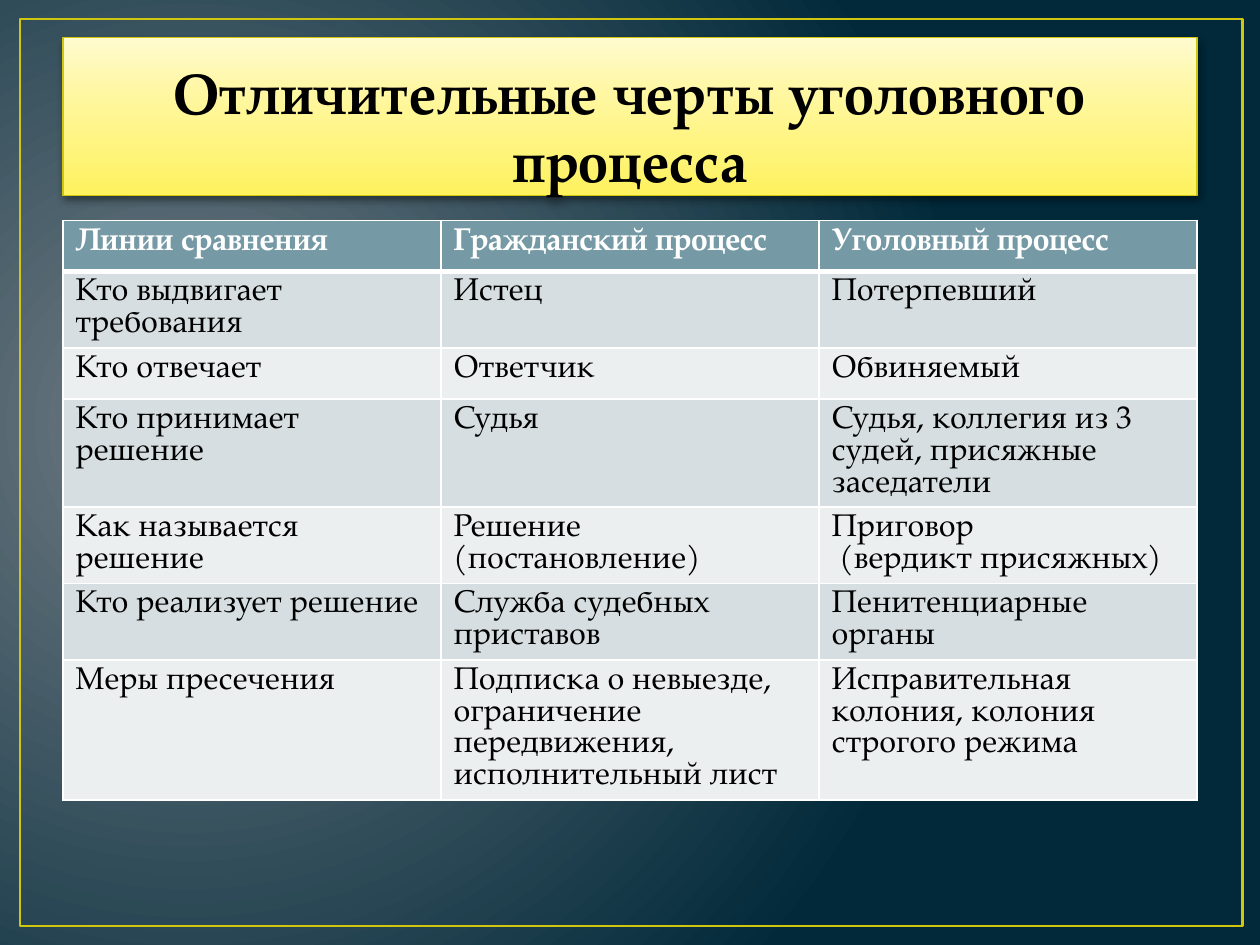
import pptx
import pptx.dml.color
import pptx.enum.shapes
import pptx.enum.text
import pptx.oxml
import pptx.oxml.ns
import pptx.util

Pt = pptx.util.Pt
RGB = pptx.dml.color.RGBColor
ALIGN = pptx.enum.text.PP_ALIGN
ANCHOR = pptx.enum.text.MSO_ANCHOR

FONT = "TeX Gyre Pagella"
BLACK = RGB(0x00, 0x00, 0x00)
WHITE = RGB(0xFF, 0xFF, 0xFF)
GOLD = RGB(0xCF, 0xC6, 0x0D)
HEADER = RGB(0x75, 0x9A, 0xA5)
BANDS = [RGB(0xD6, 0xDE, 0xE1), RGB(0xEC, 0xEF, 0xF0)]
BACK_STOPS = [(0, "717C84"), (100, "01293A")]
TITLE_STOPS = [(0, "FEF25E"), (65, "FFF7A2"), (100, "FFFBCF")]

TITLE = "Отличительные черты уголовного процесса"
ROWS = [
    ["Линии сравнения", "Гражданский процесс", "Уголовный процесс"],
    ["Кто выдвигает требования", "Истец", "Потерпевший"],
    ["Кто отвечает", "Ответчик", "Обвиняемый"],
    ["Кто принимает решение", "Судья",
     "Судья, коллегия из 3 судей, присяжные заседатели"],
    ["Как называется решение", "Решение (постановление)",
     "Приговор\n (вердикт присяжных)"],
    ["Кто реализует решение", "Служба судебных приставов",
     "Пенитенциарные органы"],
    ["Меры пресечения",
     "Подписка о невыезде, ограничение передвижения, исполнительный лист",
     "Исправительная колония, колония строгого режима"],
]


def xml(text):
    """Parse an element, declaring the drawing namespaces on its root."""
    tag, rest = text.split(" ", 1)
    return pptx.oxml.parse_xml(f"{tag} {pptx.oxml.ns.nsdecls('a', 'p')} {rest}")


def gradient(stops, direction):
    gs = "".join(f'<a:gs pos="{pos * 1000}"><a:srgbClr val="{color}"/></a:gs>'
                 for pos, color in stops)
    return xml(f'<a:gradFill rotWithShape="1"><a:gsLst>{gs}</a:gsLst>'
               f'{direction}</a:gradFill>')


def write(tf, text, *, size, color=BLACK, bold=False, align=ALIGN.LEFT,
          leading=None, spacing=0):
    """Fill a text frame, one paragraph for each line of text."""
    for i, line in enumerate(text.split("\n")):
        p = tf.add_paragraph() if i else tf.paragraphs[0]
        p.alignment = align
        p.line_spacing = Pt(leading)
        r = p.add_run()
        r.text = line
        r.font.name, r.font.size, r.font.bold = FONT, Pt(size), bold
        r.font.color.rgb = color
        if spacing:
            r.font._element.set("spc", str(int(spacing * 100)))


class Deck:
    def __init__(self, prs):
        self.s = prs.slides.add_slide(prs.slide_layouts[5])

    def background(self, stops):
        fill = self.s.background.fill
        fill.solid()
        bg = self.s._element.cSld.bg.bgPr
        bg.replace(bg[0], gradient(
            stops, '<a:path path="circle"><a:fillToRect l="15000" t="50000" '
                   'r="85000" b="60000"/></a:path>'))

    def frame(self, x, y, w, h):
        sp = self.s.shapes.add_shape(
            pptx.enum.shapes.MSO_SHAPE.RECTANGLE, Pt(x), Pt(y), Pt(w), Pt(h))
        sp.shadow.inherit = False
        sp.fill.background()
        sp.line.color.rgb = GOLD
        sp.line.width = Pt(1.5)

    def title(self, text, x, y, w, h):
        sp = self.s.shapes.title
        sp.left, sp.top, sp.width, sp.height = Pt(x), Pt(y), Pt(w), Pt(h)
        props = sp._element.spPr
        props.append(gradient(TITLE_STOPS, '<a:lin ang="16200000" scaled="0"/>'))
        sp.line.color.rgb = GOLD
        sp.line.width = Pt(0.75)
        props.append(xml(
            f'<a:effectLst ><a:outerShdw blurRad="{Pt(5)}" dist="{Pt(2)}" '
            'dir="5400000" rotWithShape="0"><a:srgbClr val="000000">'
            '<a:alpha val="43000"/></a:srgbClr></a:outerShdw></a:effectLst>'))
        tf = sp.text_frame
        tf.word_wrap = True
        tf.auto_size = pptx.enum.text.MSO_AUTO_SIZE.NONE
        tf.vertical_anchor = ANCHOR.BOTTOM
        tf.margin_bottom = Pt(0.5)
        write(tf, text, size=32.4, bold=True, align=ALIGN.CENTER,
              leading=39.4, spacing=0.5)

    def border(self, cell, side, width):
        cell._tc.get_or_add_tcPr().append(xml(
            f'<a:ln{side} w="{Pt(width)}"><a:solidFill><a:srgbClr '
            f'val="{WHITE}"/></a:solidFill></a:ln{side}>'))

    def table(self, rows, x, y, w, row_h):
        """Rows start at the least height and grow with their text."""
        table = self.s.shapes.add_table(
            len(rows), len(rows[0]), Pt(x), Pt(y), Pt(w),
            Pt(row_h * len(rows))).table
        for i, row in enumerate(rows):
            head = i == 0
            for j, text in enumerate(row):
                cell = table.cell(i, j)
                for side in "LRTB":
                    thick = (i, side) in [(0, "B"), (1, "T")]
                    self.border(cell, side, 3 if thick else 1)
                cell.fill.solid()
                cell.fill.fore_color.rgb = HEADER if head else BANDS[(i - 1) % 2]
                write(cell.text_frame, text, size=18, bold=head,
                      color=WHITE if head else BLACK, leading=18.2)


def main():
    prs = pptx.Presentation()
    prs.slide_width, prs.slide_height = Pt(720), Pt(540)
    deck = Deck(prs)

    # Backdrop and gold frame
    deck.background(BACK_STOPS)
    deck.frame(11.5, 10.8, 698.4, 518.4)

    # Title and comparison table share the same margins
    deck.title(TITLE, 36, 21.6, 648, 90)
    deck.table(ROWS, 36, 126, 648, 29.2)

    prs.save("out.pptx")


if __name__ == "__main__":
    main()
